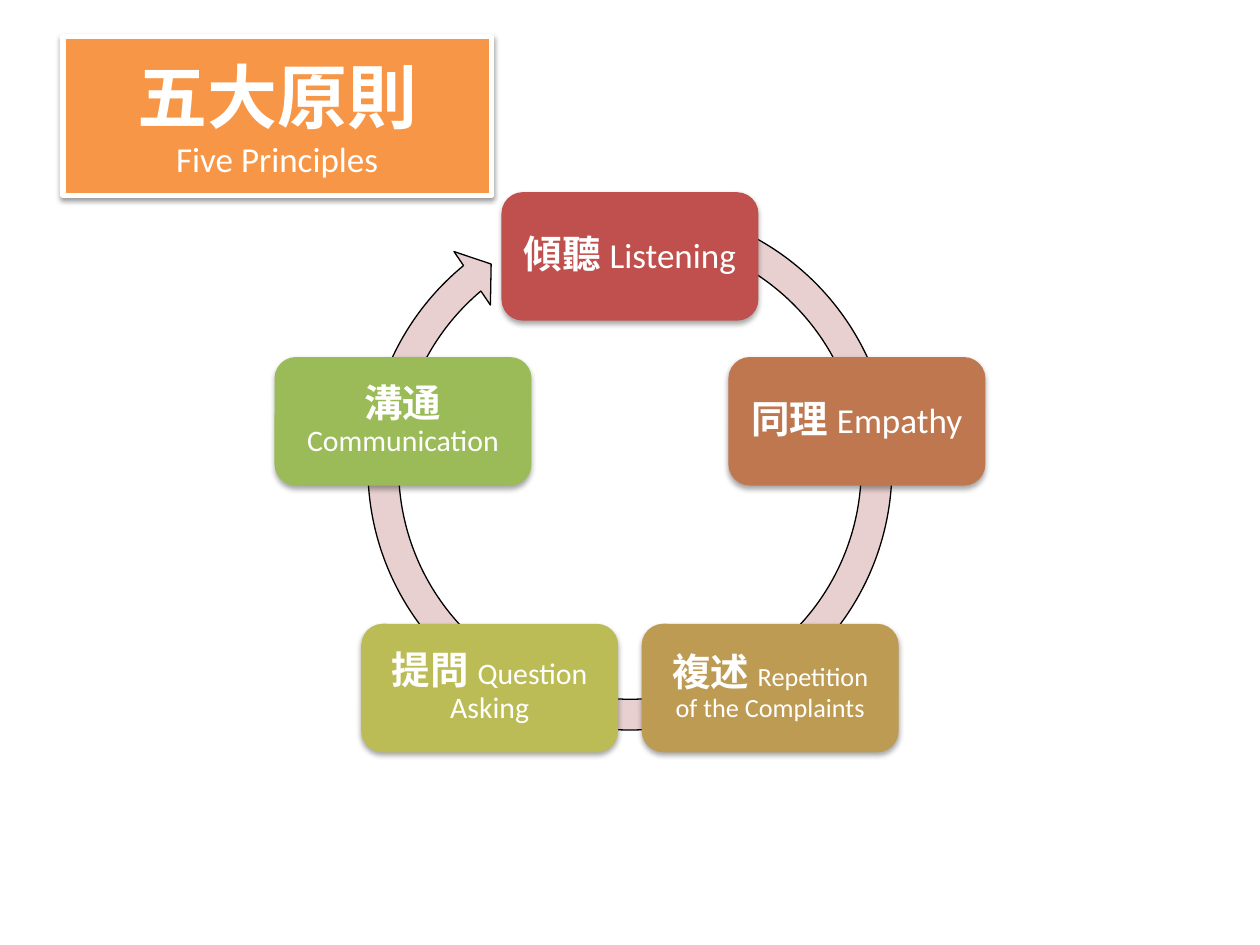
import math
from dataclasses import dataclass

from lxml import etree
from pptx import Presentation
from pptx.dml.color import RGBColor
from pptx.enum.shapes import MSO_SHAPE
from pptx.enum.text import MSO_ANCHOR, PP_ALIGN
from pptx.oxml.ns import qn
from pptx.util import Cm, Pt

PROCESS = MSO_SHAPE.FLOWCHART_PROCESS
ROUNDED = MSO_SHAPE.ROUNDED_RECTANGLE
CIRCULAR_ARROW = MSO_SHAPE.CIRCULAR_ARROW
MIDDLE = MSO_ANCHOR.MIDDLE
CENTER = PP_ALIGN.CENTER

CHINESE_FONT = "Noto Sans CJK SC"
LATIN_FONT = "Calibri"
WHITE = "FFFFFF"

CENTER_X, CENTER_Y, RADIUS = 12.7, 9.98, 4.81
BOX_WIDTH, BOX_HEIGHT = 5.18, 2.59
BOX_INSET = 0.23
ARROW_TOP, ARROW_SIZE = 3.81, 11.25


@dataclass(frozen=True)
class Principle:
    chinese: str
    english: str
    english_size: int
    fill: str


PRINCIPLES = [
    Principle("傾聽", "Listening", 20, "C0504D"),
    Principle("同理", "Empathy", 20, "BF7750"),
    Principle("複述", "Repetition of the Complaints", 15, "BD9B53"),
    Principle("提問", "Question Asking", 17, "BCBC56"),
    Principle("溝通", "Communication", 17, "9BBB59"),
]


def color(value: str) -> RGBColor:
    return RGBColor.from_string(value)


def add_box(page, kind, left: float, top: float, width: float, height: float,
            fill: str, line: str | None = None, line_width: float = 0):
    """Add a flat shape without shadow; lengths are in centimetres."""
    box = page.shapes.add_shape(kind, Cm(left), Cm(top), Cm(width), Cm(height))
    box.fill.solid()
    box.fill.fore_color.rgb = color(fill)
    if line:
        box.line.color.rgb = color(line)
        box.line.width = Pt(line_width)
    else:
        box.line.fill.background()
    box.shadow.inherit = False
    box.text_frame.word_wrap = True
    box.text_frame.vertical_anchor = MIDDLE
    return box


def add_shadow(box, opacity: int, blur: float, distance: float) -> None:
    """Add a black shadow that falls straight down."""
    effects = box._element.spPr.find(qn("a:effectLst"))
    shadow = etree.SubElement(
        effects, qn("a:outerShdw"), blurRad=str(Pt(blur)), dist=str(Pt(distance)),
        dir=str(90 * 60000), rotWithShape="0")
    black = etree.SubElement(shadow, qn("a:srgbClr"), val="000000")
    etree.SubElement(black, qn("a:alpha"), val=str(opacity * 1000))


def add_span(para, text: str, *, size: float, font: str = LATIN_FONT,
             bold: bool = False) -> None:
    para.alignment = CENTER
    span = para.add_run()
    span.text = text
    span.font.size = Pt(size)
    span.font.bold = bold
    span.font.color.rgb = color(WHITE)
    span.font.name = font
    etree.SubElement(span.font._element, qn("a:ea"), typeface=font)


def add_title(page) -> None:
    box = add_box(page, PROCESS, 1.27, 0.74, 8.64, 3.2, "F79646", WHITE, 3)
    add_shadow(box, 38, 3.1, 1.6)
    frame = box.text_frame
    add_span(frame.paragraphs[0], "五大原則", size=40, font=CHINESE_FONT, bold=True)
    add_span(frame.add_paragraph(), "Five Principles", size=20)


def add_cycle_arrow(page) -> None:
    arrow = add_box(page, CIRCULAR_ARROW, CENTER_X - ARROW_SIZE / 2, ARROW_TOP,
                    ARROW_SIZE, ARROW_SIZE, "E8D0D0", "000000", 0.75)
    thickness, head_width = 5.5 / 100, 5.8 / 100
    angles = [degrees * 0.6 for degrees in (5.51, 230.25, 289.37)]
    for index, value in enumerate([thickness, *angles, head_width]):
        arrow.adjustments[index] = value


def add_principle(page, principle: Principle, angle: float) -> None:
    """Place a principle on the circle, angle measured clockwise from the top."""
    left = CENTER_X + RADIUS * math.sin(angle) - BOX_WIDTH / 2
    top = CENTER_Y - RADIUS * math.cos(angle) - BOX_HEIGHT / 2
    box = add_box(page, ROUNDED, left, top, BOX_WIDTH, BOX_HEIGHT, principle.fill)
    add_shadow(box, 35, 3.1, 1.8)
    frame = box.text_frame
    frame.margin_left = frame.margin_right = Cm(BOX_INSET)
    frame.margin_top = frame.margin_bottom = Cm(BOX_INSET)
    para = frame.paragraphs[0]
    para.line_spacing = 0.9
    add_span(para, principle.chinese + " ", size=22, font=CHINESE_FONT, bold=True)
    add_span(para, principle.english, size=principle.english_size)


def main() -> None:
    deck = Presentation()
    deck.slide_width, deck.slide_height = Cm(25.4), Cm(19.05)
    page = deck.slides.add_slide(deck.slide_layouts[6])
    add_title(page)
    add_cycle_arrow(page)
    for index, principle in enumerate(PRINCIPLES):
        add_principle(page, principle, math.tau * index / len(PRINCIPLES))
    deck.save("out.pptx")


if __name__ == "__main__":
    main()
